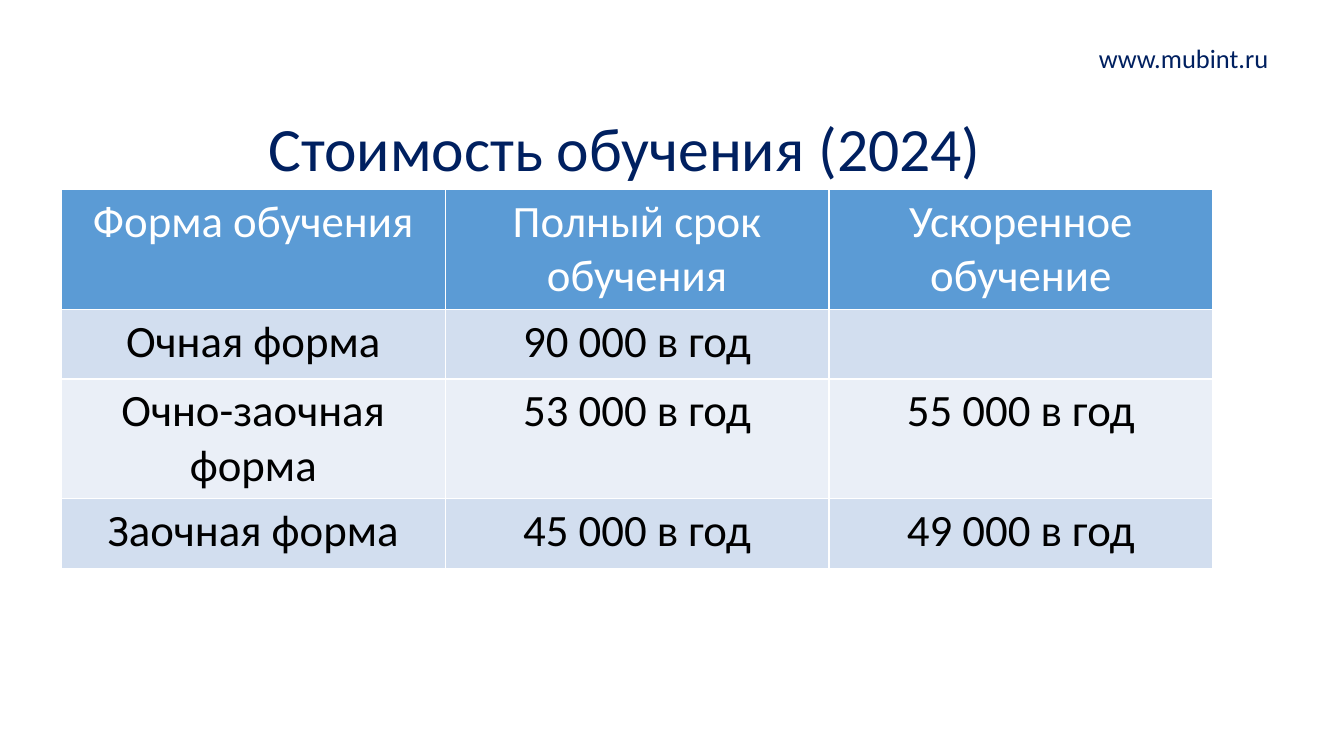
from lxml import etree
from pptx import Presentation, util as u
from pptx.dml.color import RGBColor
from pptx.enum import text
from pptx.oxml.ns import qn

COLORS = {"navy": "002060", "white": "FFFFFF", "black": "000000",
          "header": "5B9BD5", "odd": "D2DEEF", "even": "EAEFF7"}
FONT = "Calibri"

# wording, (left, top, width, height) in inches, size, line spacing
TEXTS = [
    ("Стоимость обучения (2024)", (1.08, 1.14, 10.24, 0.74), 44, 0.9),
    ("www.mubint.ru", (10.23, 0.42, 3.02, 0.35), 18.9, 0.7),
]
PRICES = [
    ("Форма обучения", "Полный срок обучения", "Ускоренное обучение"),
    ("Очная форма", "90 000 в год", ""),
    ("Очно-заочная форма", "53 000 в год", "55 000 в год"),
    ("Заочная форма", "45 000 в год", "49 000 в год"),
]
TABLE_LEFT, TABLE_TOP, TABLE_WIDTH = 0.61, 1.88, 11.42
ONE_LINE, TWO_LINES = 0.69, 1.19
ROW_HEIGHTS = [TWO_LINES, ONE_LINE, TWO_LINES, ONE_LINE]


def write(tf, wording, size, color, spacing=1.0):
    p = tf.paragraphs[0]
    p.alignment = text.PP_ALIGN.CENTER
    p.line_spacing = spacing
    if not wording:
        return
    r = p.add_run()
    r.text = wording
    for name, value in {"name": FONT, "size": u.Pt(size), "bold": False}.items():
        setattr(r.font, name, value)
    r.font.color.rgb = RGBColor.from_string(COLORS[color])


def add_borders(cell):
    """Draw a thin white line on each side; call before filling the cell."""
    tc_pr = cell._tc.get_or_add_tcPr()
    for side in ("a:lnL", "a:lnR", "a:lnT", "a:lnB"):
        ln = etree.SubElement(tc_pr, qn(side), w=str(u.Pt(1)))
        fill = etree.SubElement(ln, qn("a:solidFill"))
        etree.SubElement(fill, qn("a:srgbClr"), val=COLORS["white"])


def add_price_table(slide):
    rows, cols = len(PRICES), len(PRICES[0])
    frame = slide.shapes.add_table(
        rows, cols, u.Inches(TABLE_LEFT), u.Inches(TABLE_TOP),
        u.Inches(TABLE_WIDTH), u.Inches(sum(ROW_HEIGHTS)))
    table = frame.table
    for i, (row, height) in enumerate(zip(PRICES, ROW_HEIGHTS)):
        table.rows[i].height = u.Inches(height)
        band = "header" if i == 0 else "odd" if i % 2 else "even"
        for j, wording in enumerate(row):
            cell = table.cell(i, j)
            add_borders(cell)
            cell.fill.solid()
            cell.fill.fore_color.rgb = RGBColor.from_string(COLORS[band])
            write(cell.text_frame, wording, 32, "black" if i else "white")


def main():
    prs = Presentation()
    prs.slide_width, prs.slide_height = u.Inches(13.33), u.Inches(7.5)
    slide = prs.slides.add_slide(prs.slide_layouts[6])
    for wording, box, size, spacing in TEXTS:
        tf = slide.shapes.add_textbox(*map(u.Inches, box)).text_frame
        tf.word_wrap = True
        tf.vertical_anchor = text.MSO_ANCHOR.BOTTOM
        write(tf, wording, size, "navy", spacing)
    add_price_table(slide)
    prs.save("out.pptx")


if __name__ == "__main__":
    main()
